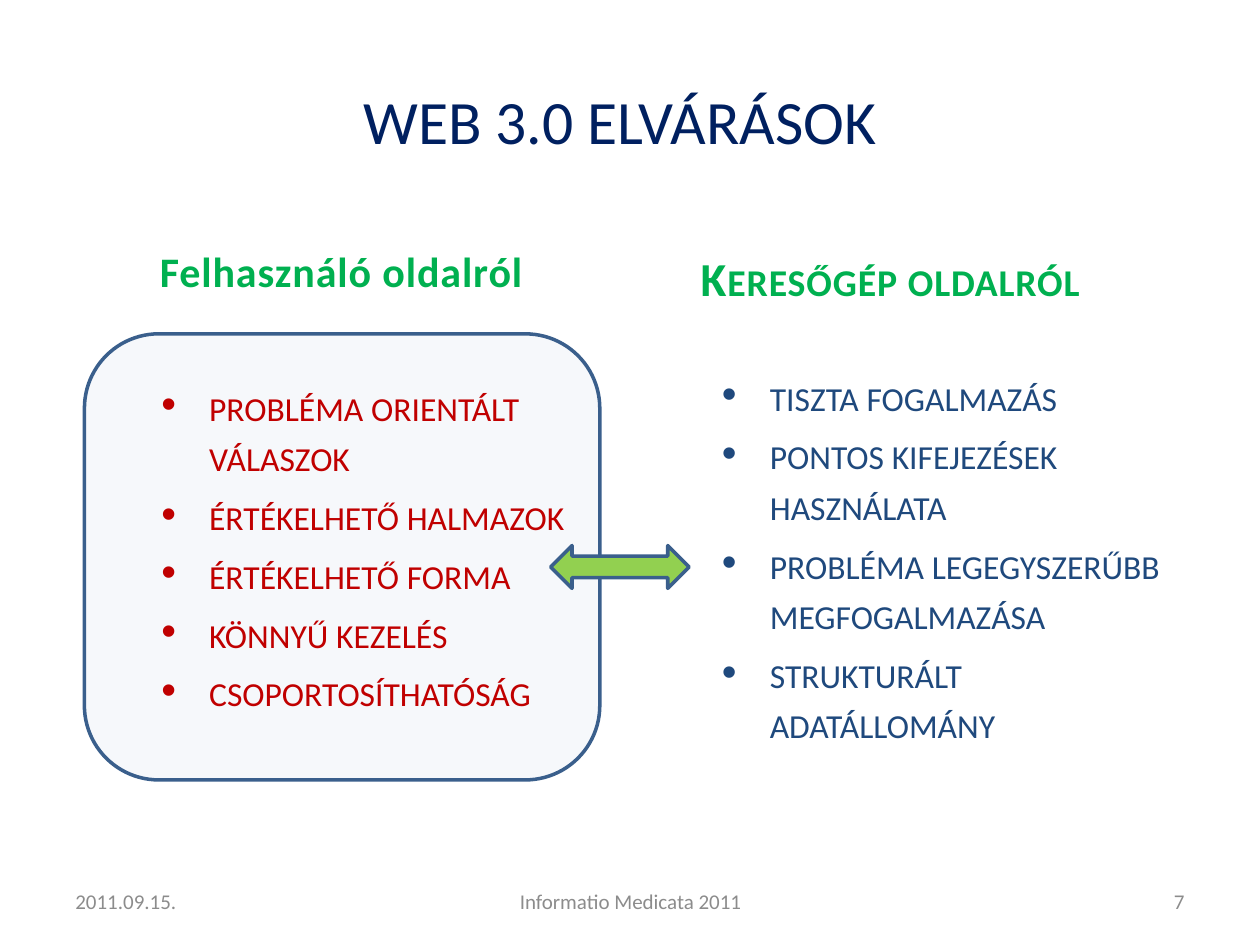
from lxml import etree
from pptx import Presentation
from pptx.dml.color import RGBColor
from pptx.enum.shapes import MSO_SHAPE
from pptx.enum.text import MSO_ANCHOR, MSO_AUTO_SIZE, PP_ALIGN
from pptx.oxml.ns import qn
from pptx.util import Inches, Pt

LEFT, CENTER, RIGHT = PP_ALIGN.LEFT, PP_ALIGN.CENTER, PP_ALIGN.RIGHT
TOP, MIDDLE, BOTTOM = MSO_ANCHOR.TOP, MSO_ANCHOR.MIDDLE, MSO_ANCHOR.BOTTOM
NO_FIT = MSO_AUTO_SIZE.NONE
ROUNDED, DOUBLE_ARROW = MSO_SHAPE.ROUNDED_RECTANGLE, MSO_SHAPE.LEFT_RIGHT_ARROW
COMPARISON_LAYOUT = 4
FONT = "Calibri"
NAVY, GREEN, RED, BLUE, GREY = "002060", "00B050", "C00000", "1F497D", "8C8C8C"
PALE, LIME, OUTLINE = "4F81BD", "92D050", "3A5F8C"
SLIDE_W, SLIDE_H = Inches(10), Inches(7.5)
COLUMNS, ROWS = 100, 75
HEADING_SIZE = (44.2, 7)
HANGING = Inches(0.38)


def color(hex_string):
    return RGBColor.from_string(hex_string)


def grid(box):
    """Turn left, top, width, height in grid cells into slide lengths."""
    return [int(cells * unit) for cells, unit in
            zip(box, (SLIDE_W / COLUMNS, SLIDE_H / ROWS) * 2)]


def place(shape, box):
    shape.left, shape.top, shape.width, shape.height = grid(box)


def prepare(shape, anchor):
    frame = shape.text_frame
    frame.word_wrap = True
    frame.auto_size = NO_FIT
    frame.vertical_anchor = anchor
    return frame


def write(paragraph, text, size, ink, align=LEFT, bold=False, **run_attributes):
    paragraph.alignment = align
    run = paragraph.add_run()
    run.text = text
    run.font.name, run.font.size, run.font.bold = FONT, Pt(size), bold
    run.font.color.rgb = color(ink)
    for key, value in run_attributes.items():
        run.font._element.set(key, value)


def add_bullet(paragraph):
    properties = paragraph._p.get_or_add_pPr()
    properties.set("marL", str(HANGING))
    properties.set("indent", str(-HANGING))
    etree.SubElement(properties, qn("a:buFont")).set("typeface", "Arial")
    etree.SubElement(properties, qn("a:buChar")).set("char", "•")


def add_outlined(slide, preset, box, fill):
    shape = slide.shapes.add_shape(preset, *grid(box))
    shape.shadow.inherit = False
    shape.fill.solid()
    shape.fill.fore_color.rgb = color(fill)
    shape.line.color.rgb = color(OUTLINE)
    shape.line.width = Pt(2)
    return shape


def build_title(title, box):
    place(title, box)
    write(prepare(title, MIDDLE).paragraphs[0], "web 3.0 elvárások",
          44, NAVY, CENTER, cap="small")


def build_panel(slide, box):
    panel = add_outlined(slide, ROUNDED, box, PALE)
    fill_color = panel._element.spPr.find(qn("a:solidFill"))[0]
    etree.SubElement(fill_color, qn("a:alpha")).set("val", "5000")
    # Behind the text
    slide.shapes._spTree.insert(2, panel._element)


def build_column(heading, points, box, inset, title, title_size, items, ink,
                 **title_attributes):
    """Heading in the top left of the box, list from the inset to its far corner."""
    left, top, width, height = box
    across, down = inset
    place(heading, (left, top, *HEADING_SIZE))
    write(prepare(heading, BOTTOM).paragraphs[0], title, title_size, GREEN,
          CENTER, True, spc="50", **title_attributes)

    place(points, (left + across, top + down, width - across, height - down))
    frame = prepare(points, TOP)
    for number, item in enumerate(items):
        paragraph = frame.add_paragraph() if number else frame.paragraphs[0]
        paragraph.space_before = Pt(4.8 if number else 0)
        add_bullet(paragraph)
        write(paragraph, item, 24, ink, cap="small")


def build_footer(slide, top, height):
    for left, width, text, align in (
            (5, 23.3, "2011.09.15.", LEFT),
            (34.2, 31.7, "Informatio Medicata 2011", CENTER),
            (71.7, 23.3, "7", RIGHT)):
        note = slide.shapes.add_textbox(*grid((left, top, width, height)))
        write(prepare(note, MIDDLE).paragraphs[0], text, 12, GREY, align)


def main():
    deck = Presentation()
    deck.slide_width, deck.slide_height = SLIDE_W, SLIDE_H
    slide = deck.slides.add_slide(deck.slide_layouts[COMPARISON_LAYOUT])
    title, user_heading, user_list, engine_heading, engine_list = slide.placeholders

    build_title(title, (4.2, 2.8, 90, 12.5))
    build_panel(slide, (6.7, 26.5, 40.9, 35.4))

    # User side
    build_column(user_heading, user_list, (5, 17, 47.8, 48), (6.8, 12.6),
                 "Felhasználó oldalról", 24,
                 ["probléma orientált válaszok", "értékelhető halmazok",
                  "értékelhető forma", "könnyű kezelés", "csoportosíthatóság"],
                 RED)
    # Search engine side
    build_column(engine_heading, engine_list, (49.2, 17.8, 46.1, 47.2), (7.1, 11),
                 "Keresőgép oldalról", 27,
                 ["tiszta fogalmazás", "pontos kifejezések használata",
                  "probléma legegyszerűbb megfogalmazása",
                  "strukturált adatállomány"],
                 BLUE, cap="small")

    add_outlined(slide, DOUBLE_ARROW, (43.7, 43.3, 11, 3.4), LIME)
    build_footer(slide, 69.5, 4)
    deck.save("out.pptx")


if __name__ == "__main__":
    main()
